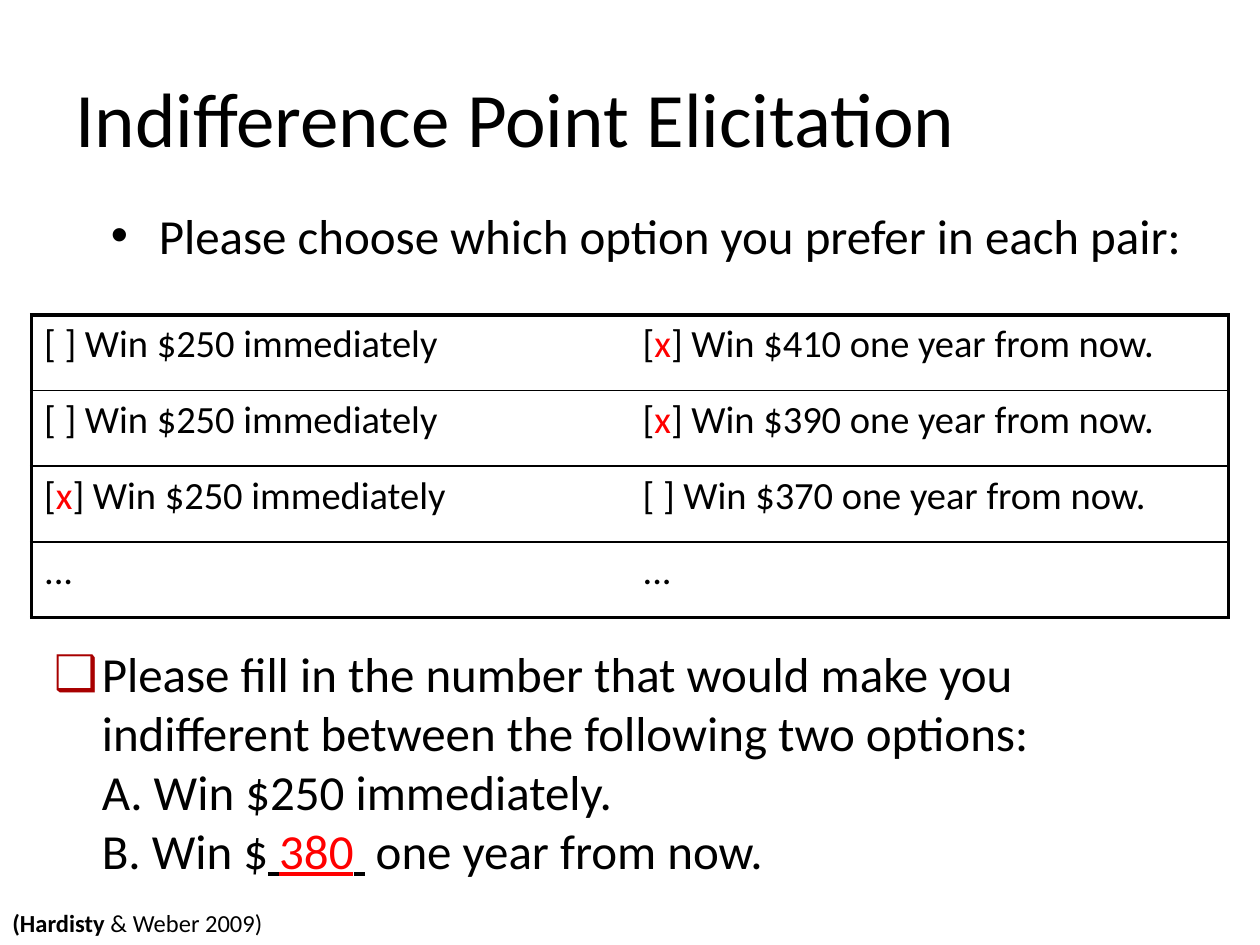
from dataclasses import dataclass

from lxml import etree
from pptx import Presentation
from pptx import util as u
from pptx.dml.color import RGBColor
from pptx.enum import text
from pptx.oxml import ns


@dataclass(frozen=True)
class Theme:
    font: str = "Calibri"
    ink: str = "000000"
    mark: str = "FF0000"
    bullet: str = "A80000"
    title: int = 44
    body: int = 28
    table: int = 22
    source: int = 14
    frame: float = 2.25
    rule: float = 1


theme = Theme()


def write(p, size, runs):
    """Add (text, format) runs; a newline in the text is a line break."""
    for words, fmt in runs:
        for i, line in enumerate(words.split("\n")):
            if i:
                p.add_line_break()
            r = p.add_run()
            r.text = line
            r.font.color.rgb = RGBColor.from_string(fmt.get("color", theme.ink))
            values = {"name": theme.font, "size": u.Pt(size),
                      "bold": fmt.get("bold"), "underline": fmt.get("underline")}
            for key, value in values.items():
                setattr(r.font, key, value)


def add_bullet(p, char, color):
    """Give the paragraph a hanging bullet."""
    pPr = p._p.get_or_add_pPr()
    pPr.set("marL", str(u.Inches(0.38)))
    pPr.set("indent", str(-u.Inches(0.38)))
    clr = etree.SubElement(pPr, ns.qn("a:buClr"))
    etree.SubElement(clr, ns.qn("a:srgbClr"), val=color)
    etree.SubElement(pPr, ns.qn("a:buFont"), typeface="Arial")
    etree.SubElement(pPr, ns.qn("a:buChar"), char=char)


prs = Presentation()
prs.slide_width, prs.slide_height = u.Inches(10), u.Inches(7.5)
s = prs.slides.add_slide(prs.slide_layouts[6])

# Text blocks: box, size, anchor, alignment, bullet, runs
top, middle = text.MSO_ANCHOR.TOP, text.MSO_ANCHOR.MIDDLE
left, center = text.PP_ALIGN.LEFT, text.PP_ALIGN.CENTER
blocks = [
    ((0.5, 0.3, 9, 1.25), theme.title, middle, left, None,
     [("Indifference Point Elicitation", {})]),
    ((0.5, 1.58, 9.34, 1.25), theme.body, top, center, ("•", theme.ink),
     [("Please choose which option you prefer in each pair: ", {})]),
    ((0.33, 5.06, 9.34, 2), theme.body, top, left, ("❑", theme.bullet),
     [("Please fill in the number that would make you indifferent between "
       "the following two options:\nA. Win $250 immediately.\nB. Win $", {}),
      (" ", {"underline": True}),
      ("380", {"underline": True, "color": theme.mark}),
      (" ", {"underline": True}),
      (" one year from now.", {})]),
    ((0, 7.16, 6.5, 0.34), theme.source, top, left, None,
     [("(Hardisty", {"bold": True}), (" & Weber 2009)", {})]),
]
for box, size, anchor, align, bullet, runs in blocks:
    tf = s.shapes.add_textbox(*map(u.Inches, box)).text_frame
    tf.word_wrap = True
    tf.vertical_anchor = anchor
    p = tf.paragraphs[0]
    p.alignment = align
    if bullet:
        add_bullet(p, *bullet)
    write(p, size, runs)

# Table of choices
now, later = "Win $250 immediately", "Win ${} one year from now."
rows = [
    ("[ ] " + now, "[x] " + later.format(410)),
    ("[ ] " + now, "[x] " + later.format(390)),
    ("[x] " + now, "[ ] " + later.format(370)),
    ("...", "..."),
]
table = s.shapes.add_table(len(rows), 2, u.Inches(0.25), u.Inches(2.5),
                           u.Inches(9.5), u.Inches(2.4)).table
table.first_row = table.horz_banding = False
last = len(rows) - 1
for i, row in enumerate(rows):
    for j, words in enumerate(row):
        cell = table.cell(i, j)
        before, mark, after = words.partition("x] ")
        runs = [(words, {})]
        if mark:
            runs = [(before, {}), ("x", {"color": theme.mark}), ("] " + after, {})]
        write(cell.text_frame.paragraphs[0], theme.table, runs)

        tcPr = cell._tc.get_or_add_tcPr()
        borders = {
            "lnL": theme.frame if j == 0 else 0,
            "lnR": theme.frame if j == 1 else 0,
            "lnT": theme.frame if i == 0 else theme.rule,
            "lnB": theme.frame if i == last else theme.rule,
        }
        for tag, width in borders.items():
            ln = etree.SubElement(tcPr, ns.qn("a:" + tag), w=str(u.Pt(width)))
            if width:
                fill = etree.SubElement(ln, ns.qn("a:solidFill"))
                etree.SubElement(fill, ns.qn("a:srgbClr"), val=theme.ink)
            else:
                etree.SubElement(ln, ns.qn("a:noFill"))
        cell.fill.background()

prs.save("out.pptx")
